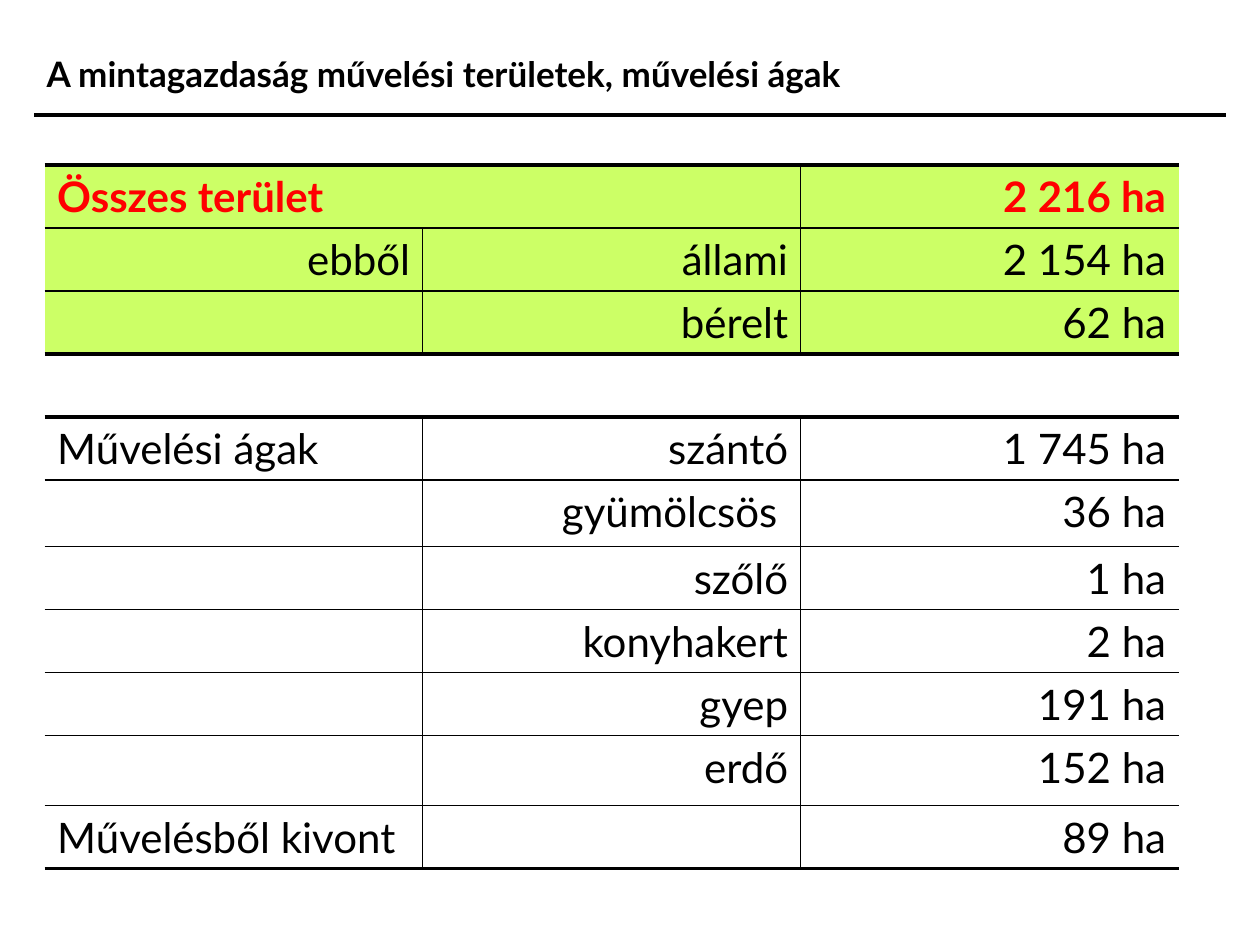
"""Build the slide listing cultivated areas and land-use categories."""
import pptx
import pptx.dml.color
import pptx.enum.shapes
import pptx.enum.text
import pptx.oxml
import pptx.oxml.ns
import pptx.util
from lxml import etree

Pt = pptx.util.Pt
RIGHT = pptx.enum.text.PP_ALIGN.RIGHT
LEFT = pptx.enum.text.PP_ALIGN.LEFT


def rgb(value):
    return pptx.dml.color.RGBColor.from_string(value)


def set_border(cell, side, width):
    tc_pr = cell._tc.get_or_add_tcPr()
    ln = etree.SubElement(tc_pr, pptx.oxml.ns.qn(f"a:ln{side}"), w=str(Pt(width)))
    if width:
        fill = etree.SubElement(ln, pptx.oxml.ns.qn("a:solidFill"))
        etree.SubElement(fill, pptx.oxml.ns.qn("a:srgbClr"), val="000000")
    else:
        etree.SubElement(ln, pptx.oxml.ns.qn("a:noFill"))


prs = pptx.Presentation()
prs.slide_width, prs.slide_height = Pt(720), Pt(540)
s = prs.slides.add_slide(prs.slide_layouts[6])

rule = s.shapes.add_connector(
    pptx.enum.shapes.MSO_CONNECTOR.STRAIGHT, Pt(19.5), Pt(65.8), Pt(700.5), Pt(65.8))
rule.line.color.rgb = rgb("000000")
rule.line.width = Pt(2)
etree.SubElement(rule._element.spPr, pptx.oxml.ns.qn("a:effectLst"))

title = s.shapes.add_textbox(Pt(19.5), Pt(26.3), Pt(680.5), Pt(31))
tf = title.text_frame
tf.word_wrap = True
p = tf.paragraphs[0]
p.text = "A mintagazdaság művelési területek, művelési ágak"
p.font.name, p.font.size, p.font.bold = "Lato", Pt(20), True
p.font.color.rgb = rgb("000000")

rows = [
    ("Összes terület", "", "2 216 ha"),
    ("ebből", "állami", "2 154 ha"),
    ("", "bérelt", "62 ha"),
    ("", "", ""),
    ("Művelési ágak", "szántó", "1 745 ha"),
    ("", "gyümölcsös ", "36 ha"),
    ("", "szőlő", "1 ha"),
    ("", "konyhakert", "2 ha"),
    ("", "gyep", "191 ha"),
    ("", "erdő", "152 ha"),
    ("Művelésből kivont", "", "89 ha"),
]
heights = [36, 36, 36, 36, 36, 38, 36, 36, 36, 40, 36]
gap_row = 3
thick_edges = (0, gap_row, gap_row + 1, len(rows))

table = s.shapes.add_table(
    len(rows), 3, Pt(25.5), Pt(94.2), Pt(648), Pt(sum(heights))).table
table.first_row = table.horz_banding = False
for col in table.columns:
    col.width = Pt(216)

for i, texts in enumerate(rows):
    table.rows[i].height = Pt(heights[i])
    for j, text in enumerate(texts):
        cell = table.cell(i, j)
        divider = 0 if i == gap_row else 1
        set_border(cell, "L", divider if j > 0 else 0)
        set_border(cell, "R", divider if j < 2 else 0)
        set_border(cell, "T", 2.25 if i in thick_edges else 1)
        set_border(cell, "B", 2.25 if i + 1 in thick_edges else 1)
        if i < gap_row:
            cell.fill.solid()
            cell.fill.fore_color.rgb = rgb("CCFF66")
        else:
            cell.fill.background()
        p = cell.text_frame.paragraphs[0]
        p.text = text
        p.alignment = RIGHT if j > 0 or text == "ebből" else LEFT
        p.font.name, p.font.size, p.font.bold = "Lato", Pt(24), i == 0
        p.font.color.rgb = rgb("FF0000" if i == 0 else "000000")

table.cell(0, 0).merge(table.cell(0, 1))

prs.save("out.pptx")
